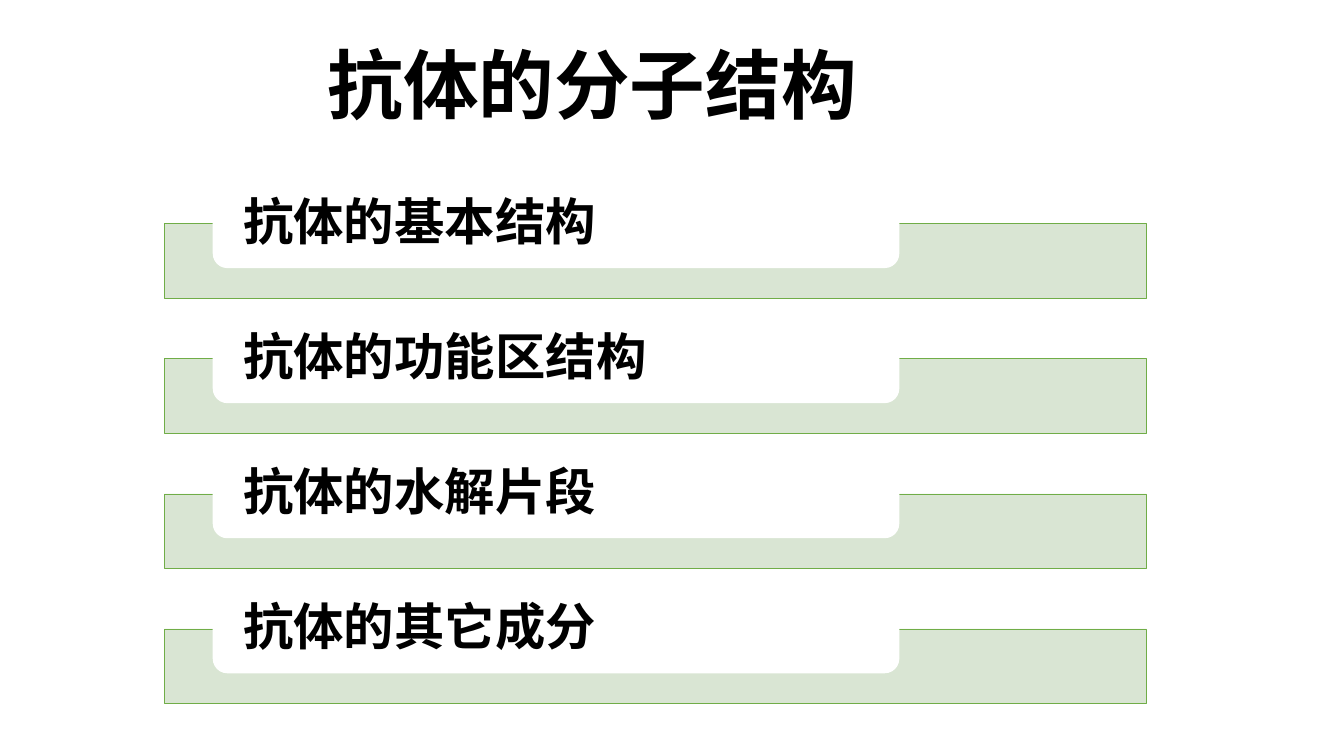
from pptx import Presentation
from pptx.dml.color import RGBColor
from pptx.enum.shapes import MSO_SHAPE as SHAPE
from pptx.enum.text import MSO_ANCHOR as ANCHOR
from pptx.oxml.ns import qn
from pptx.util import Pt
from lxml.etree import SubElement

PX = 9144
FONT = "Noto Sans CJK SC"
COLORS = {"text": "000000", "bar": "D5E3CF", "edge": "70AD47", "label": "FFFFFF"}
TOPICS = ["抗体的基本结构", "抗体的功能区结构", "抗体的水解片段", "抗体的其它成分"]


def px(*lengths):
    return [n * PX for n in lengths]


def color(name):
    return RGBColor.from_string(COLORS[name])


def write(s, text, size, inset_x=10, inset_y=5):
    tf = s.text_frame
    tf.word_wrap = True
    tf.vertical_anchor = ANCHOR.MIDDLE
    tf.margin_left = tf.margin_right = inset_x * PX
    tf.margin_top = tf.margin_bottom = inset_y * PX
    p = tf.paragraphs[0]
    p.alignment = 1
    p.line_spacing = 0.9
    r = p.add_run()
    r.text = text
    r.font.size = Pt(size)
    r.font.bold = True
    r.font.color.rgb = color("text")
    r.font.name = FONT
    SubElement(r.font._element, qn("a:ea"), typeface=FONT)


def add_block(shapes, kind, box, fill, edge=None, opacity=100):
    s = shapes.add_shape(kind, *px(*box))
    s.shadow.inherit = False
    s.fill.solid()
    s.fill.fore_color.rgb = color(fill)
    if opacity < 100:
        rgb = s._element.spPr.find(qn("a:solidFill"))[0]
        SubElement(rgb, qn("a:alpha"), val=str(opacity * 1000))
    if edge:
        s.line.color.rgb = color(edge)
        s.line.width = Pt(0.5)
    else:
        s.line.fill.background()
    return s


def add_title(slide, box, text):
    write(slide.shapes.add_textbox(*px(*box)), text, 54)


def add_topic(slide, x, y, w, text):
    shapes = slide.shapes.add_group_shape().shapes
    add_block(shapes, SHAPE.RECTANGLE, (x, y + 43, w, 74), "bar", "edge", 90)
    label = add_block(shapes, SHAPE.ROUNDED_RECTANGLE,
                      (x + w // 20, y, w * 7 // 10, 87), "label")
    write(label, text, 36, inset_x=26, inset_y=0)


def add_topics(slide, box, topics):
    x, y, w, h = box
    pitch = h // len(topics)
    for i, topic in enumerate(topics):
        add_topic(slide, x, y + i * pitch, w, topic)


def main():
    prs = Presentation()
    prs.slide_width, prs.slide_height = px(1333, 750)
    slide = prs.slides.add_slide(prs.slide_layouts[6])
    add_title(slide, (315, 32, 767, 113), "抗体的分子结构")
    add_topics(slide, (163, 179, 974, 536), TOPICS)
    prs.save("out.pptx")


if __name__ == "__main__":
    main()
